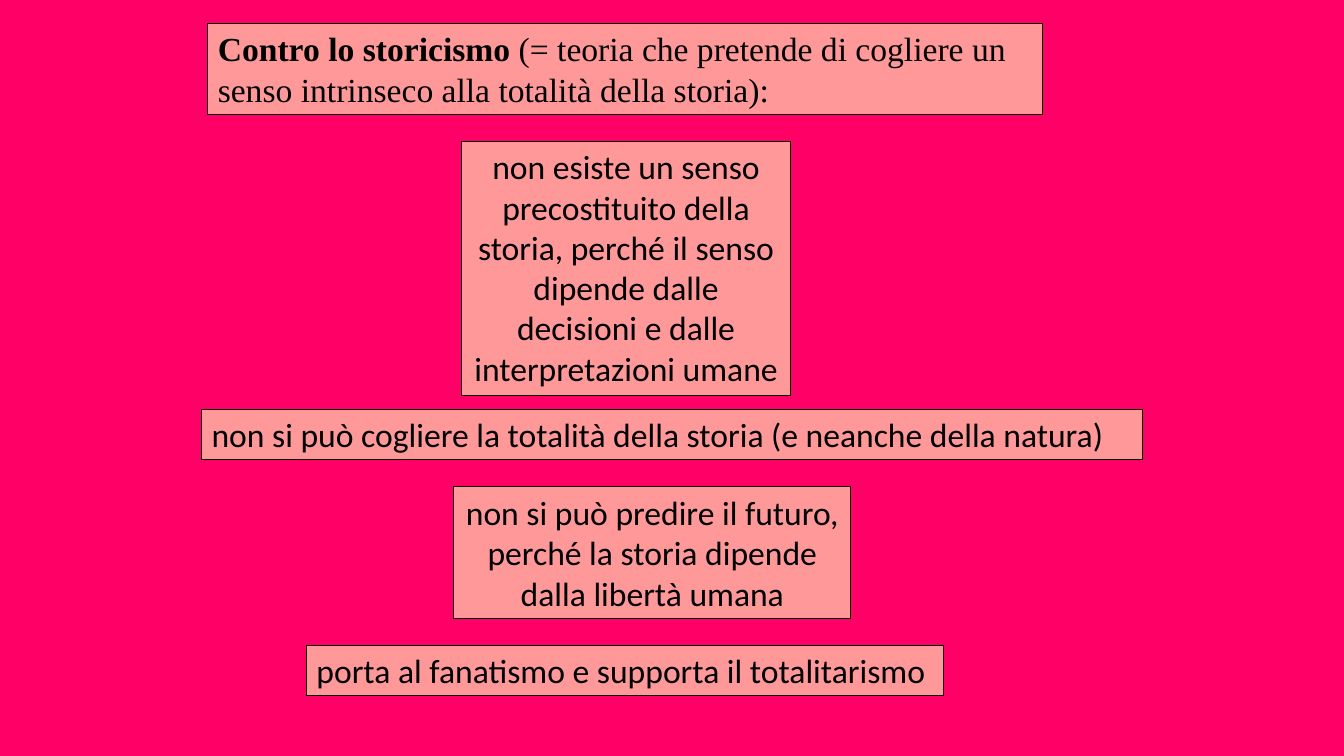
from dataclasses import dataclass

from pptx import Presentation
from pptx.dml.color import RGBColor
from pptx.enum.text import MSO_ANCHOR, MSO_AUTO_SIZE, PP_ALIGN
from pptx.util import Inches, Pt

LEFT, CENTER, JUSTIFY = PP_ALIGN.LEFT, PP_ALIGN.CENTER, PP_ALIGN.JUSTIFY
TOP = MSO_ANCHOR.TOP
NO_AUTO_SIZE = MSO_AUTO_SIZE.NONE
TITLE_ONLY = 5


@dataclass(frozen=True)
class Theme:
    background: RGBColor = RGBColor(0xFF, 0x00, 0x66)
    panel: RGBColor = RGBColor(0xFF, 0x99, 0x99)
    ink: RGBColor = RGBColor(0x00, 0x00, 0x00)
    title_font: str = "Times New Roman"
    body_font: str = "Calibri"
    text_size: Pt = Pt(24)
    outline: Pt = Pt(0.75)


THEME = Theme()

TITLE_BOX = (2.06, 0.23, 8.28, 0.91)
TITLE_RUNS = [
    ("Contro lo storicismo ", True),
    ("(= teoria che pretende di cogliere un senso intrinseco "
     "alla totalità della storia):", False),
]

# Box (left, top, width, height), alignment, text
THESES = [
    ((4.58, 1.4, 3.26, 2.52), CENTER,
     "non esiste un senso precostituito della storia, perché il senso "
     "dipende dalle decisioni e dalle interpretazioni umane"),
    ((2, 4.06, 9.33, 0.5), JUSTIFY,
     "non si può cogliere la totalità della storia (e neanche della natura)"),
    ((4.5, 4.83, 3.94, 1.31), CENTER,
     "non si può predire il futuro, perché la storia dipende "
     "dalla libertà umana"),
    ((3.04, 6.4, 6.32, 0.5), LEFT,
     "porta al fanatismo e supporta il totalitarismo"),
]


def fill_panel(shape, runs, font_name, alignment):
    """Style a panel and write its text run by run."""
    shape.fill.solid()
    shape.fill.fore_color.rgb = THEME.panel
    shape.line.color.rgb = THEME.ink
    shape.line.width = THEME.outline

    frame = shape.text_frame
    frame.word_wrap = True
    frame.auto_size = NO_AUTO_SIZE
    frame.vertical_anchor = TOP
    paragraph = frame.paragraphs[0]
    paragraph.alignment = alignment
    for text, bold in runs:
        run = paragraph.add_run()
        run.text = text
        run.font.name = font_name
        run.font.size = THEME.text_size
        run.font.bold = bold
        run.font.color.rgb = THEME.ink


def add_title(slide, box):
    title = slide.shapes.title
    title.left, title.top, title.width, title.height = map(Inches, box)
    fill_panel(title, TITLE_RUNS, THEME.title_font, LEFT)


def add_thesis(slide, box, alignment, text):
    panel = slide.shapes.add_textbox(*map(Inches, box))
    fill_panel(panel, [(text, False)], THEME.body_font, alignment)


def build_slide(presentation):
    slide = presentation.slides.add_slide(presentation.slide_layouts[TITLE_ONLY])
    slide.background.fill.solid()
    slide.background.fill.fore_color.rgb = THEME.background

    # Heading
    add_title(slide, TITLE_BOX)

    # Arguments against historicism
    for box, alignment, text in THESES:
        add_thesis(slide, box, alignment, text)


def main():
    presentation = Presentation()
    presentation.slide_width = Inches(13.33)
    presentation.slide_height = Inches(7.5)
    build_slide(presentation)
    presentation.save("out.pptx")


if __name__ == "__main__":
    main()
